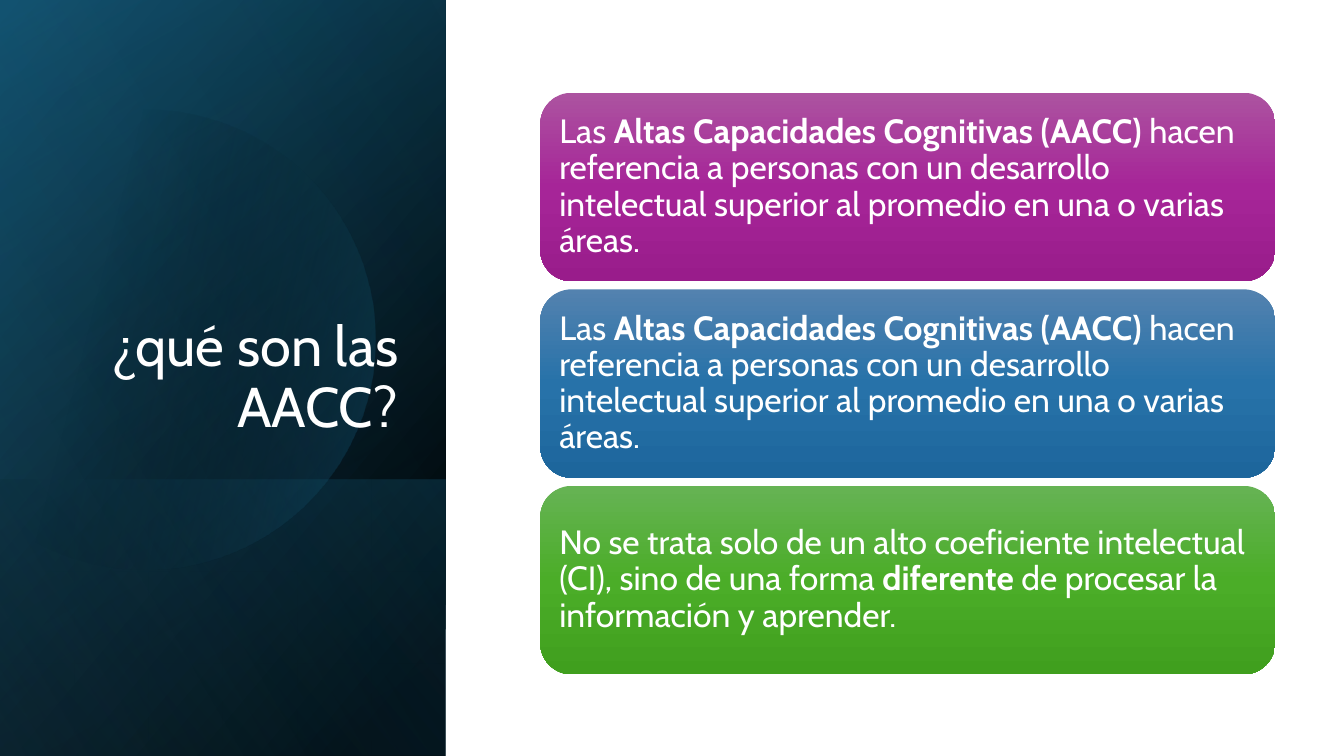
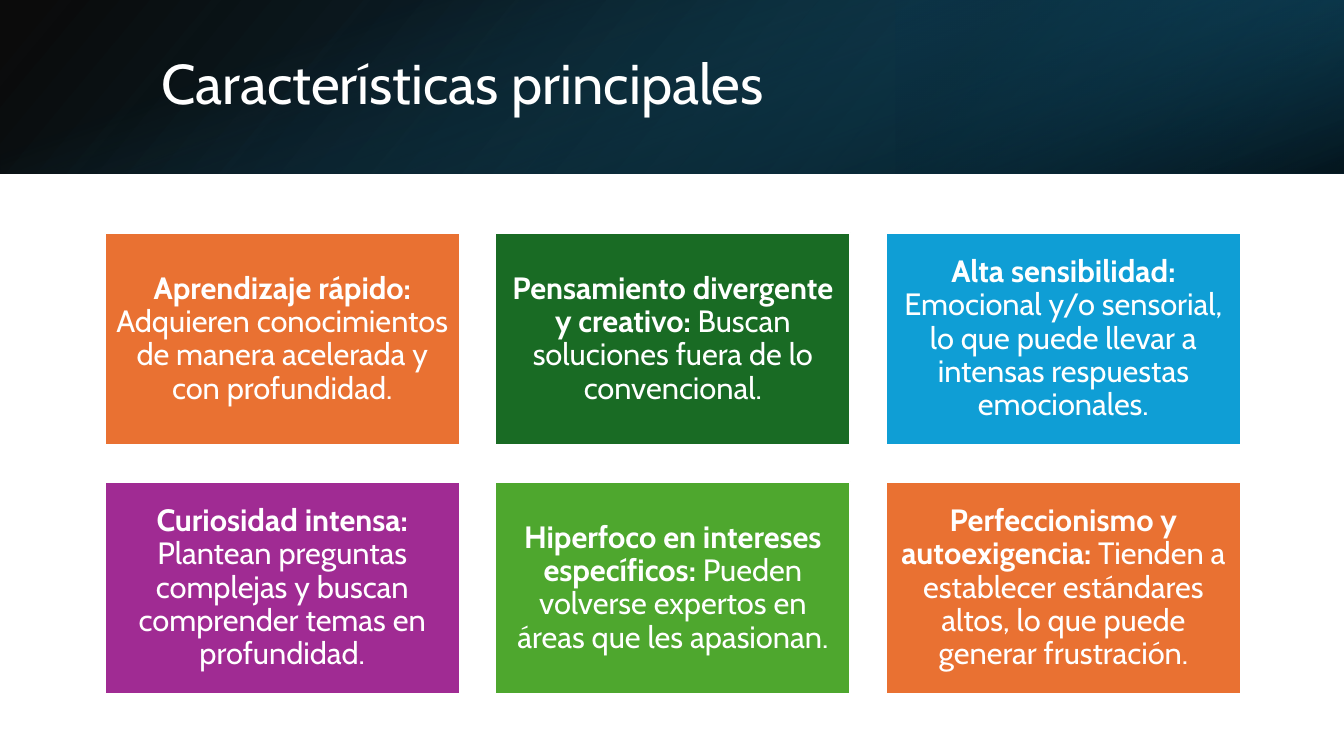
from dataclasses import dataclass
from math import acos, cos, pi, sin

from pptx import Presentation
from pptx.dml.color import RGBColor as Rgb
from pptx.enum.shapes import MSO_SHAPE as Shape
from pptx.enum.text import MSO_ANCHOR as Anchor, MSO_AUTO_SIZE as Fit, PP_ALIGN as Align
from pptx.oxml import parse_xml
from pptx.oxml.ns import nsdecls, qn
from pptx.util import Inches, Pt


@dataclass(frozen=True)
class Theme:
    font: str = "Cabin"
    title_size: int = 40
    card_size: int = 24
    tile_size: int = 22
    white: str = "FFFFFF"
    black: str = "000000"
    teal: str = "156082"
    petrol: str = "104862"
    navy: str = "0B3041"
    sky: str = "46B1E1"
    orange: str = "E97132"
    forest: str = "196B24"
    blue: str = "0F9ED5"
    purple: str = "A02B93"
    green: str = "4EA72E"
    purple_fade: tuple = ("AC53A0", "A62598", "991C8B")
    blue_fade: tuple = ("5382AF", "2772A9", "1D669C")
    green_fade: tuple = ("66B354", "4BAD28", "409F1E")


theme = Theme()


def paint(shape, stops, angle):
    shape.shadow.inherit = False
    shape.line.fill.background()
    shape.fill.background()
    marks = "".join(
        f'<a:gs pos="{place * 1000}"><a:srgbClr val="{color}">'
        f'<a:alpha val="{alpha * 1000}"/></a:srgbClr></a:gs>'
        for place, color, alpha in stops
    )
    gradient = parse_xml(
        f'<a:gradFill {nsdecls("a")} rotWithShape="1"><a:gsLst>{marks}</a:gsLst>'
        f'<a:lin ang="{angle * 60000}" scaled="0"/></a:gradFill>'
    )
    properties = shape._element.spPr
    properties.replace(properties.find(qn("a:noFill")), gradient)


def write(frame, text, size, align, anchor, inset):
    layout = {"word_wrap": True, "auto_size": Fit.NONE, "vertical_anchor": anchor}
    for side in ("left", "right", "top", "bottom"):
        layout[f"margin_{side}"] = Inches(inset)
    for name, value in layout.items():
        setattr(frame, name, value)
    para = frame.paragraphs[0]
    para.alignment = align
    para.line_spacing = 0.9
    for index, part in enumerate(text.split("*")):
        if part:
            span = para.add_run()
            span.text = part
            look = {"name": theme.font, "size": Pt(size), "bold": index % 2 == 1}
            for name, value in look.items():
                setattr(span.font, name, value)
            span.font.color.rgb = Rgb.from_string(theme.white)


deck = Presentation()
deck.slide_width = Inches(13.33)
deck.slide_height = Inches(7.5)
column = deck.slide_width / 100
row = deck.slide_height / 100
title_only = deck.slide_layouts[5]

panel = (0, 0, 33.16, 100)
panel_foot = (0, 63.47, 33.16, 36.53)
disc = (10.8, 44.93, 17.1, 30.4)
band = (0, 0, 100, 22.93)
band_end = (66.67, 0, 33.33, 22.93)

pages = [
    (
        "¿qué son las AACC?", (4.8, 24.53, 25.58, 34.93), Align.RIGHT, Anchor.BOTTOM,
        [
            (panel, 90, True, 50, [(8, theme.black, 100), (100, theme.petrol, 100)]),
            (panel, 90, True, 30, [(0, theme.black, 0), (99, theme.teal, 46)]),
            (panel_foot, 90, True, 130, [(2, theme.teal, 29), (100, theme.black, 30)]),
            (disc, 0, False, 14, [(29, theme.black, 0), (100, theme.teal, 43)]),
            (panel, 90, True, 120, [(0, theme.black, 0), (99, theme.sky, 11)]),
        ],
    ),
    (
        "Características principales", (11.25, 5.07, 82.35, 12.8), Align.LEFT, Anchor.MIDDLE,
        [
            (band, 0, True, 140, [(0, theme.black, 96), (100, theme.petrol, 100)]),
            (band_end, 180, True, 320, [(19, theme.navy, 68), (100, theme.teal, 79)]),
            (band, 90, False, 340, [(23, theme.teal, 0), (99, theme.black, 74)]),
        ],
    ),
]

for heading, heading_box, align, anchor, layers in pages:
    page = deck.slides.add_slide(title_only)
    for box, turn, flip, angle, stops in layers:
        left, top, width, height = (
            round(share * unit) for share, unit in zip(box, (column, row, column, row))
        )
        if box is disc:
            reach = acos(-left / width)
            points = [
                (left + width * cos(reach * step / 60), top + height * sin(reach * step / 60))
                for step in range(-60, 61)
            ]
            outline = page.shapes.build_freeform(*points[0], scale=1.0)
            outline.add_line_segments(points[1:], close=True)
            layer = outline.convert_to_shape()
        else:
            if turn == 90:
                left += (width - height) // 2
                top += (height - width) // 2
                width, height = height, width
            layer = page.shapes.add_shape(Shape.RECTANGLE, left, top, width, height)
            layer.rotation = turn
            if flip:
                layer._element.spPr.xfrm.set("flipH", "1")
        paint(layer, stops, angle)

    title = page.shapes.title
    for name, share, unit in zip(
        ("left", "top", "width", "height"), heading_box, (column, row, column, row)
    ):
        setattr(title, name, round(share * unit))
    write(title.text_frame, heading, theme.title_size, align, anchor, 0.1)
    page.shapes._spTree.append(title._element)

meaning = (
    "Las *Altas Capacidades Cognitivas (AACC)* hacen referencia a personas con un "
    "desarrollo intelectual superior al promedio en una o varias áreas."
)
difference = (
    "No se trata solo de un alto coeficiente intelectual (CI), sino de una forma "
    "*diferente* de procesar la información y aprender."
)
cards = [
    (meaning, theme.purple_fade),
    (meaning, theme.blue_fade),
    (difference, theme.green_fade),
]
for index, (text, fade) in enumerate(cards):
    card = deck.slides[0].shapes.add_shape(
        Shape.ROUNDED_RECTANGLE,
        round(40.2 * column), round((12.27 + 26 * index) * row),
        round(54.68 * column), round(24.93 * row),
    )
    paint(card, [(50 * place, color, 100) for place, color in enumerate(fade)], 90)
    write(card.text_frame, text, theme.card_size, Align.LEFT, Anchor.MIDDLE, 0.1)

tiles = [
    ("*Aprendizaje rápido:* Adquieren conocimientos de manera acelerada y con profundidad.",
     theme.orange),
    ("*Pensamiento divergente y creativo:* Buscan soluciones fuera de lo convencional.",
     theme.forest),
    ("*Alta sensibilidad:* Emocional y/o sensorial, lo que puede llevar a intensas "
     "respuestas emocionales.", theme.blue),
    ("*Curiosidad intensa:* Plantean preguntas complejas y buscan comprender temas en "
     "profundidad.", theme.purple),
    ("*Hiperfoco en intereses específicos:* Pueden volverse expertos en áreas que les "
     "apasionan.", theme.green),
    ("*Perfeccionismo y autoexigencia:* Tienden a establecer estándares altos, lo que "
     "puede generar frustración.", theme.orange),
]
for index, (text, color) in enumerate(tiles):
    down, across = divmod(index, 3)
    tile = deck.slides[1].shapes.add_shape(
        Shape.RECTANGLE,
        round((7.8 + 29.06 * across) * column), round((30.8 + 32.93 * down) * row),
        round(26.4 * column), round(28.13 * row),
    )
    tile.shadow.inherit = False
    tile.fill.solid()
    tile.fill.fore_color.rgb = Rgb.from_string(color)
    tile.line.color.rgb = Rgb.from_string(theme.white)
    tile.line.width = Pt(1.5)
    write(tile.text_frame, text, theme.tile_size, Align.CENTER, Anchor.MIDDLE, 0.09)

deck.save("out.pptx")
